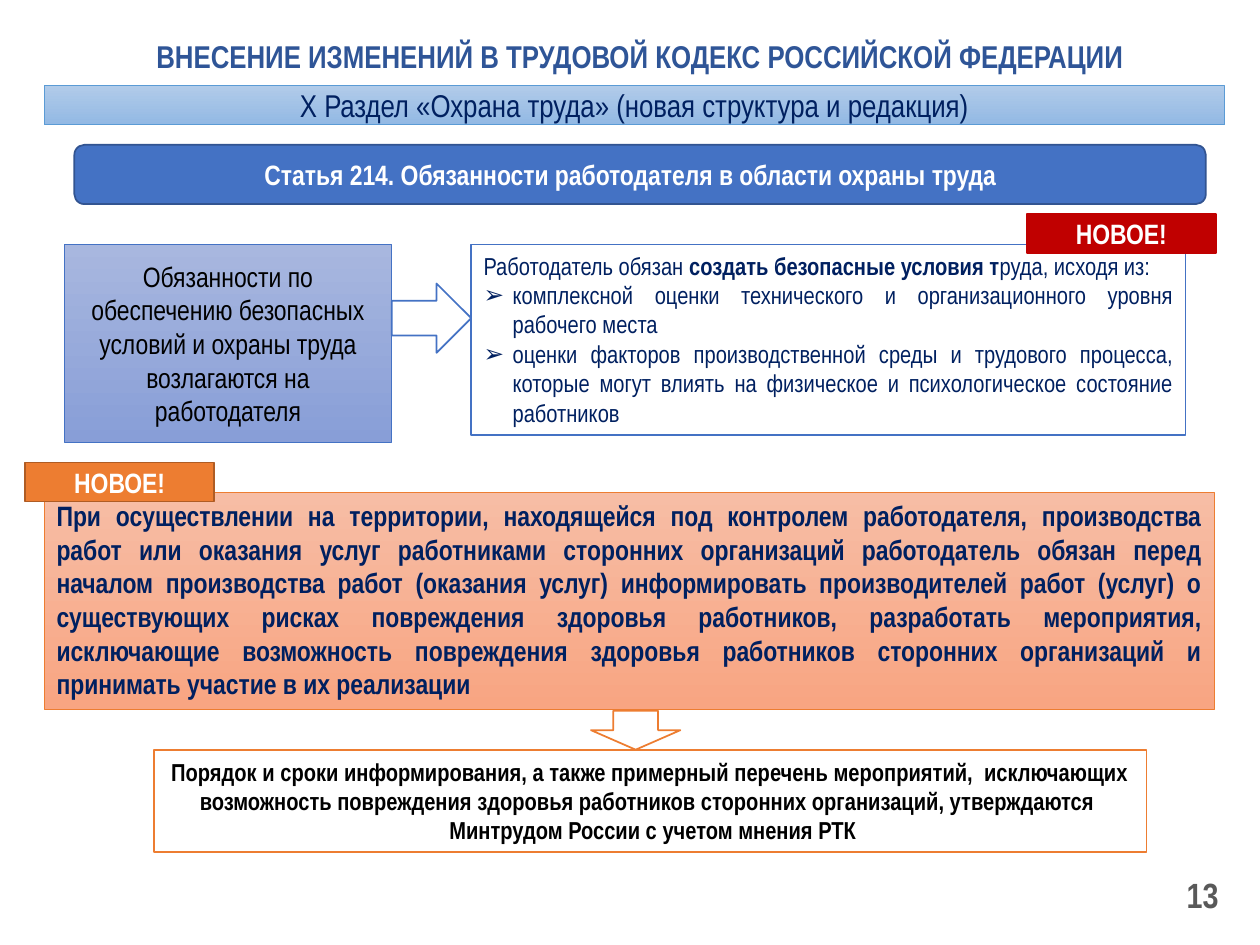
from dataclasses import dataclass
from typing import Optional

from lxml.etree import SubElement
from pptx import Presentation
from pptx.dml.color import RGBColor
from pptx.enum.shapes import MSO_SHAPE as Preset
from pptx.enum.text import MSO_ANCHOR as Anchor, MSO_AUTO_SIZE as AutoSize, PP_ALIGN as Align
from pptx.oxml.ns import qn
from pptx.util import Inches, Pt

FONT = "Arial Narrow"
COLORS = {
    "white": "FFFFFF", "black": "000000", "navy": "002060", "gray": "595959",
    "title": "2F5597", "blue": "4472C4", "blue_edge": "325491", "sky": "5B9BD5",
    "orange": "ED7D31", "orange_edge": "AF5C24", "red": "C00000",
    "sky_top": "B1CBE9", "sky_bottom": "93B9E4",
    "blue_top": "A8B7DF", "blue_bottom": "889ED7",
    "orange_top": "F7BDA5", "orange_bottom": "F8A582",
}


@dataclass(frozen=True)
class TextStyle:
    size: int
    color: str
    bold: bool = False
    align: Align = Align.CENTER
    anchor: Anchor = Anchor.MIDDLE
    right_inset: float = 0.1


@dataclass(frozen=True)
class Line:
    runs: tuple[tuple[str, bool], ...]  # text, bold
    bullet: bool = False


@dataclass(frozen=True)
class Block:
    box: tuple[float, float, float, float]
    fill: tuple[str, ...]  # one colour, or the top and bottom of a gradient
    edge: str
    edge_width: float = 1
    preset: Preset = Preset.RECTANGLE
    style: Optional[TextStyle] = None
    lines: tuple[Line, ...] = ()


def rgb(name: str) -> RGBColor:
    return RGBColor.from_string(COLORS[name])


def plain(text: str, bold: bool = False) -> Line:
    return Line(((text, bold),))


def place(shape, box: tuple[float, float, float, float]) -> None:
    shape.left, shape.top, shape.width, shape.height = map(Inches, box)


def add_bullet(paragraph) -> None:
    properties = paragraph._p.get_or_add_pPr()
    properties.set("marL", str(Inches(0.23)))
    properties.set("indent", str(-Inches(0.23)))
    SubElement(properties, qn("a:buFont")).set("typeface", "Arial")
    SubElement(properties, qn("a:buChar")).set("char", "➢")


def write_text(shape, style: TextStyle, lines: tuple[Line, ...]) -> None:
    frame = shape.text_frame
    frame.word_wrap = True
    frame.auto_size = AutoSize.NONE
    frame.vertical_anchor = style.anchor
    frame.margin_left, frame.margin_right = Inches(0.1), Inches(style.right_inset)
    frame.margin_top = frame.margin_bottom = Inches(0.05)
    for index, line in enumerate(lines):
        paragraph = frame.add_paragraph() if index else frame.paragraphs[0]
        paragraph.alignment = style.align
        if line.bullet:
            add_bullet(paragraph)
        for text, bold in line.runs:
            run = paragraph.add_run()
            run.text = text
            run.font.name = FONT
            run.font.size = Pt(style.size)
            run.font.bold = bold
            run.font.color.rgb = rgb(style.color)


def draw_block(slide, block: Block) -> None:
    shape = slide.shapes.add_shape(block.preset, *map(Inches, block.box))
    shape.shadow.inherit = False
    if len(block.fill) == 1:
        shape.fill.solid()
        shape.fill.fore_color.rgb = rgb(block.fill[0])
    else:
        shape.fill.gradient()
        shape.fill.gradient_angle = 270
        for stop, color in zip(shape.fill.gradient_stops, block.fill):
            stop.color.rgb = rgb(color)
    shape.line.color.rgb = rgb(block.edge)
    shape.line.width = Pt(block.edge_width)
    if block.style:
        write_text(shape, block.style, block.lines)


BADGE = TextStyle(16, "white")
BADGE_LINES = (plain("НОВОЕ!", True),)

BLOCKS = (
    # Article heading
    Block((0.59, 1.15, 8.98, 0.47), ("blue",), "blue_edge", preset=Preset.ROUNDED_RECTANGLE,
          style=TextStyle(16, "white", right_inset=0.25),
          lines=(plain("Статья 214. Обязанности работодателя в области охраны труда", True),)),
    # Safe conditions
    Block((3.74, 1.94, 5.67, 1.51), ("white",), "blue",
          style=TextStyle(14, "navy", align=Align.JUSTIFY, anchor=Anchor.TOP),
          lines=(
              Line((("Работодатель обязан ", False), ("создать безопасные условия т", True),
                    ("руда, исходя из: ", False))),
              Line((("комплексной оценки технического и организационного уровня "
                     "рабочего места", False),), bullet=True),
              Line((("оценки факторов производственной среды и трудового процесса, которые "
                     "могут влиять на физическое и психологическое состояние работников",
                     False),), bullet=True))),
    # Duty to inform outside organisations
    Block((0.35, 3.91, 9.29, 1.72), ("orange_top", "orange_bottom"), "orange", 0.5,
          style=TextStyle(16, "navy", align=Align.JUSTIFY, anchor=Anchor.TOP),
          lines=(plain(
              "При осуществлении на территории, находящейся под контролем работодателя, "
              "производства работ или оказания услуг работниками сторонних организаций "
              "работодатель обязан перед началом производства работ (оказания услуг) "
              "информировать производителей работ (услуг) о существующих рисках повреждения "
              "здоровья работников, разработать мероприятия, исключающие возможность "
              "повреждения здоровья работников сторонних организаций и принимать участие "
              "в их реализации", True),)),
    # Employer's duties
    Block((0.51, 1.94, 2.6, 1.57), ("blue_top", "blue_bottom"), "blue", 0.5,
          style=TextStyle(16, "black"),
          lines=(plain("Обязанности по обеспечению безопасных условий и охраны труда "
                       "возлагаются на работодателя"),)),
    Block((0.2, 3.67, 1.5, 0.31), ("orange",), "orange_edge", style=BADGE, lines=BADGE_LINES),
    Block((3.11, 2.25, 0.63, 0.55), ("white",), "blue", preset=Preset.RIGHT_ARROW),
    # Procedure and deadlines
    Block((1.22, 5.95, 7.88, 0.81), ("white",), "orange", style=TextStyle(14, "black"),
          lines=(plain("Порядок и сроки информирования, а также примерный перечень мероприятий,  "
                       "исключающих возможность повреждения здоровья работников сторонних "
                       "организаций, утверждаются ", True),
                 plain(" Минтрудом России с учетом мнения РТК", True))),
    Block((8.15, 1.7, 1.5, 0.31), ("red",), "red", style=BADGE, lines=BADGE_LINES),
    # Section band
    Block((0.35, 0.68, 9.37, 0.31), ("sky_top", "sky_bottom"), "sky", 0.5,
          style=TextStyle(18, "navy"),
          lines=(plain("Х Раздел «Охрана труда» (новая структура и редакция)"),)),
    Block((4.69, 5.64, 0.71, 0.31), ("white",), "orange", preset=Preset.DOWN_ARROW),
)


def main() -> None:
    presentation = Presentation()
    presentation.slide_width, presentation.slide_height = Inches(10), Inches(7.5)
    slide = presentation.slides.add_slide(presentation.slide_layouts[5])

    # Title and page number
    title = slide.shapes.title
    place(title, (0.83, 0.13, 8.5, 0.63))
    write_text(title, TextStyle(18, "title"),
               (plain("ВНЕСЕНИЕ ИЗМЕНЕНИЙ В ТРУДОВОЙ КОДЕКС РОССИЙСКОЙ ФЕДЕРАЦИИ", True),))
    page_number = slide.shapes.add_textbox(*map(Inches, (7.44, 6.9, 2.33, 0.4)))
    write_text(page_number, TextStyle(20, "gray", align=Align.RIGHT), (plain("13", True),))

    for block in BLOCKS:
        draw_block(slide, block)
    presentation.save("out.pptx")


if __name__ == "__main__":
    main()
